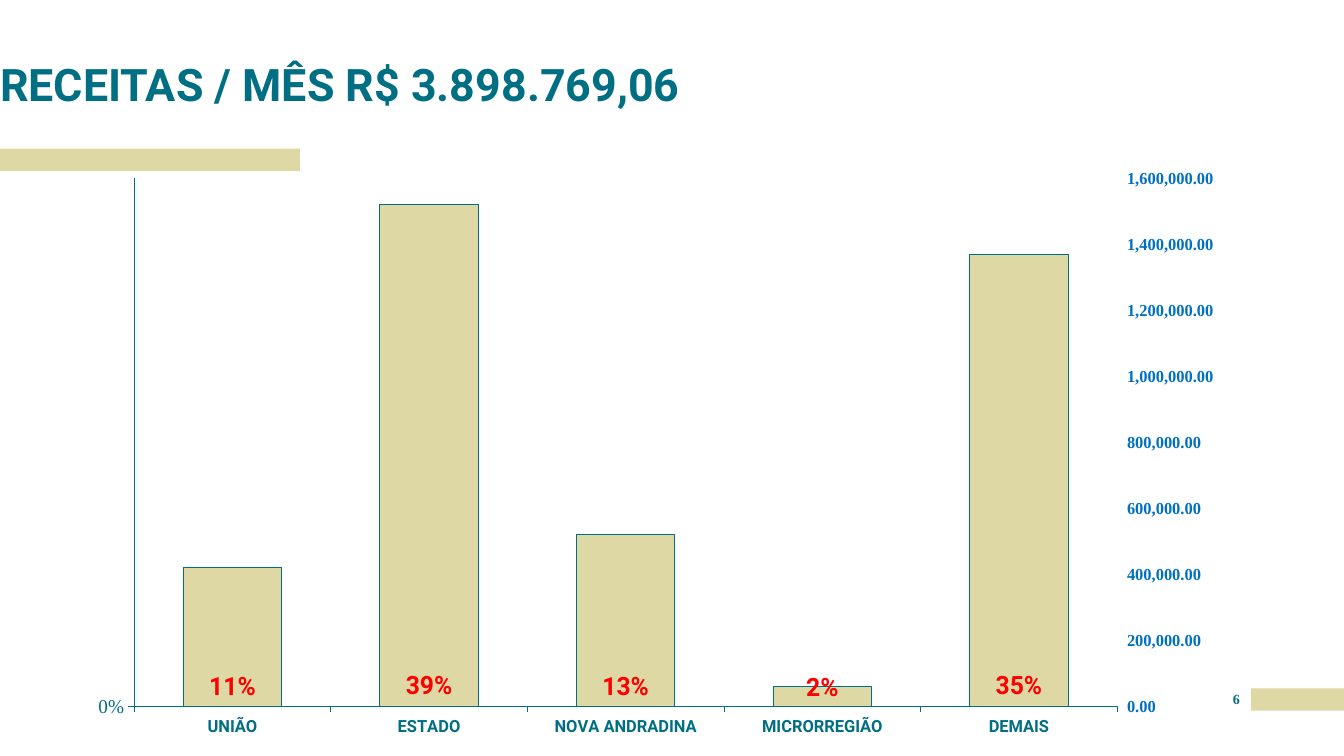
from copy import deepcopy
from dataclasses import dataclass

from pptx import Presentation
from pptx.chart.axis import CategoryAxis, ValueAxis
from pptx.chart.chart import Chart
from pptx.chart.data import CategoryChartData
from pptx.dml.color import RGBColor
from pptx.enum.chart import (XL_CHART_TYPE, XL_LABEL_POSITION,
                             XL_TICK_LABEL_POSITION, XL_TICK_MARK)
from pptx.enum.shapes import MSO_SHAPE
from pptx.enum.text import MSO_ANCHOR, MSO_AUTO_SIZE, PP_ALIGN
from pptx.oxml import parse_xml
from pptx.oxml.ns import nsdecls, qn
from pptx.slide import Slide
from pptx.text.text import Font, TextFrame
from pptx.util import Pt

COLORS = {"teal": "006F83", "sand": "DED8A4", "blue": "0070C0",
          "red": "FF0000", "grid": "A5E1E4"}
SANS, SERIF = "Roboto", "Times New Roman"


@dataclass(frozen=True)
class Band:
    left: float
    top: float
    width: float
    height: float = 15.84


@dataclass(frozen=True)
class Revenue:
    source: str
    share: float
    amount: int


BANDS = [Band(893.52, 491.76, 66.48), Band(0, 106.2, 214.2)]
REVENUES = [
    Revenue("UNIÃO", 0.11, 420000),
    Revenue("ESTADO", 0.39, 1520000),
    Revenue("NOVA ANDRADINA", 0.13, 520000),
    Revenue("MICRORREGIÃO", 0.02, 60000),
    Revenue("DEMAIS", 0.35, 1370000),
]
PLOT_AREA = {"x": 0.088, "y": 0.031, "w": 0.849, "h": 0.905}


def rgb(color: str) -> RGBColor:
    return RGBColor.from_string(COLORS[color])


def style_font(font: Font, size: float, face: str = SANS, color: str = "teal",
               bold: bool = True) -> None:
    font.size, font.name, font.bold = Pt(size), face, bold
    font.color.rgb = rgb(color)


def write_text(frame: TextFrame, text: str, *, size: float, face: str = SANS,
               align: PP_ALIGN = PP_ALIGN.LEFT, anchor: MSO_ANCHOR = MSO_ANCHOR.TOP,
               spacing: float = 1.0) -> None:
    frame.margin_left = frame.margin_top = frame.margin_right = frame.margin_bottom = 0
    frame.word_wrap = True
    frame.auto_size = MSO_AUTO_SIZE.NONE
    frame.vertical_anchor = anchor
    paragraph = frame.paragraphs[0]
    paragraph.alignment, paragraph.line_spacing = align, spacing
    run = paragraph.add_run()
    run.text = text
    style_font(run.font, size, face)


def draw_band(slide: Slide, band: Band) -> None:
    bar = slide.shapes.add_shape(MSO_SHAPE.RECTANGLE, Pt(band.left), Pt(band.top),
                                 Pt(band.width), Pt(band.height))
    bar.shadow.inherit = False
    bar.fill.solid()
    bar.fill.fore_color.rgb = rgb("sand")
    bar.line.fill.background()


def style_line(line, color: str) -> None:
    line.color.rgb = rgb(color)
    line.width = Pt(0.75)


def set_scale(axis: ValueAxis, maximum: float, step: float, number_format: str) -> None:
    axis.minimum_scale, axis.maximum_scale, axis.major_unit = 0, maximum, step
    axis.tick_labels.number_format = number_format
    axis.tick_labels.number_format_is_linked = False


def place_plot(chart: Chart) -> None:
    """Fix the inner plot rectangle as fractions of the chart."""
    modes = "".join(f'<c:{side}Mode val="edge"/>' for side in "xy")
    sizes = "".join(f'<c:{key} val="{value}"/>' for key, value in PLOT_AREA.items())
    layout = parse_xml(f'<c:layout {nsdecls("c")}><c:manualLayout>'
                       f'<c:layoutTarget val="inner"/>{modes}{sizes}'
                       '</c:manualLayout></c:layout>')
    area = chart._chartSpace.chart.plotArea
    for old in area.findall(qn("c:layout")):
        area.remove(old)
    area.insert(0, layout)


def split_to_right_axis(chart: Chart) -> tuple[CategoryAxis, ValueAxis]:
    """Move the second series to its own bars on a second pair of axes."""
    area = chart._chartSpace.chart.plotArea
    share_bars = area.find(qn("c:barChart"))
    amount_bars = deepcopy(share_bars)
    share_bars.remove(share_bars.findall(qn("c:ser"))[1])
    amount_bars.remove(amount_bars.findall(qn("c:ser"))[0])
    share_bars.addnext(amount_bars)

    categories = deepcopy(area.find(qn("c:catAx")))
    amounts = deepcopy(area.find(qn("c:valAx")))
    new_ids = {categories.find(qn("c:axId")).get("val"): "5001",
               amounts.find(qn("c:axId")).get("val"): "5002"}
    for part in (amount_bars, categories, amounts):
        for tag in ("c:axId", "c:crossAx"):
            for reference in part.findall(qn(tag)):
                reference.set("val", new_ids[reference.get("val")])
    area.findall(qn("c:valAx"))[-1].addnext(amounts)
    amounts.addnext(categories)
    amounts.find(qn("c:axPos")).set("val", "r")
    for crossing in amounts.findall(qn("c:crosses")):
        amounts.remove(crossing)
    amounts.find(qn("c:crossAx")).addnext(
        parse_xml(f'<c:crosses {nsdecls("c")} val="max"/>'))
    return CategoryAxis(categories), ValueAxis(amounts)


def draw_revenue_chart(slide: Slide) -> None:
    data = CategoryChartData()
    data.categories = [revenue.source for revenue in REVENUES]
    data.add_series("Series 1", [revenue.share for revenue in REVENUES], "0%")
    data.add_series("Series 2", [revenue.amount for revenue in REVENUES], "#,##0.00")
    chart = slide.shapes.add_chart(XL_CHART_TYPE.COLUMN_CLUSTERED, Pt(23.04), Pt(114.48),
                                   Pt(843.84), Pt(416.88), data).chart
    chart.has_legend = chart.has_title = False
    style_font(chart.font, 10, SERIF, bold=False)
    place_plot(chart)
    bars = chart.plots[0]
    bars.gap_width = bars.overlap = 100
    bars.vary_by_categories = False

    # Left and bottom axes
    sources, shares = chart.category_axis, chart.value_axis
    for axis in (sources, shares):
        axis.major_tick_mark = XL_TICK_MARK.OUTSIDE
        axis.minor_tick_mark = XL_TICK_MARK.NONE
        axis.tick_label_position = XL_TICK_LABEL_POSITION.NEXT_TO_AXIS
        style_line(axis.format.line, "teal")
    style_font(sources.tick_labels.font, 12)
    style_font(shares.tick_labels.font, 14, SERIF, bold=False)
    set_scale(shares, 100, 10000, "0%")

    # Right axis
    hidden_sources, amounts = split_to_right_axis(chart)
    hidden_sources.visible = False
    amounts.has_major_gridlines = False
    amounts.format.line.fill.background()
    style_font(amounts.tick_labels.font, 12, SERIF, "blue")
    set_scale(amounts, 1600000, 200000, "#,##0.00")
    shares.has_major_gridlines = True
    style_line(shares.major_gridlines.format.line, "grid")

    # Bars and percentage labels
    share_series, amount_series = (plot.series[0] for plot in chart.plots)
    for series, color in ((share_series, "teal"), (amount_series, "sand")):
        series.format.fill.solid()
        series.format.fill.fore_color.rgb = rgb(color)
    style_line(amount_series.format.line, "teal")
    percentages = share_series.data_labels
    percentages.show_value = True
    percentages.number_format, percentages.number_format_is_linked = "0%", False
    percentages.position = XL_LABEL_POSITION.OUTSIDE_END
    style_font(percentages.font, 18, color="red")


def main() -> None:
    deck = Presentation()
    deck.slide_width, deck.slide_height = Pt(960), Pt(540)
    slide = deck.slides.add_slide(deck.slide_layouts[5])

    for band in BANDS:
        draw_band(slide, band)

    # Title
    heading = slide.shapes.title
    heading.left, heading.top, heading.width, heading.height = (
        Pt(0), Pt(32.4), Pt(614.16), Pt(46.8))
    write_text(heading.text_frame, "RECEITAS / MÊS R$ 3.898.769,06", size=32,
               anchor=MSO_ANCHOR.BOTTOM, spacing=0.9)

    draw_revenue_chart(slide)

    # Page number
    page_number = slide.shapes.add_textbox(Pt(872.64), Pt(493.2), Pt(20.88), Pt(18))
    write_text(page_number.text_frame, "6", size=10, face=SERIF, align=PP_ALIGN.CENTER)

    deck.save("out.pptx")


if __name__ == "__main__":
    main()
